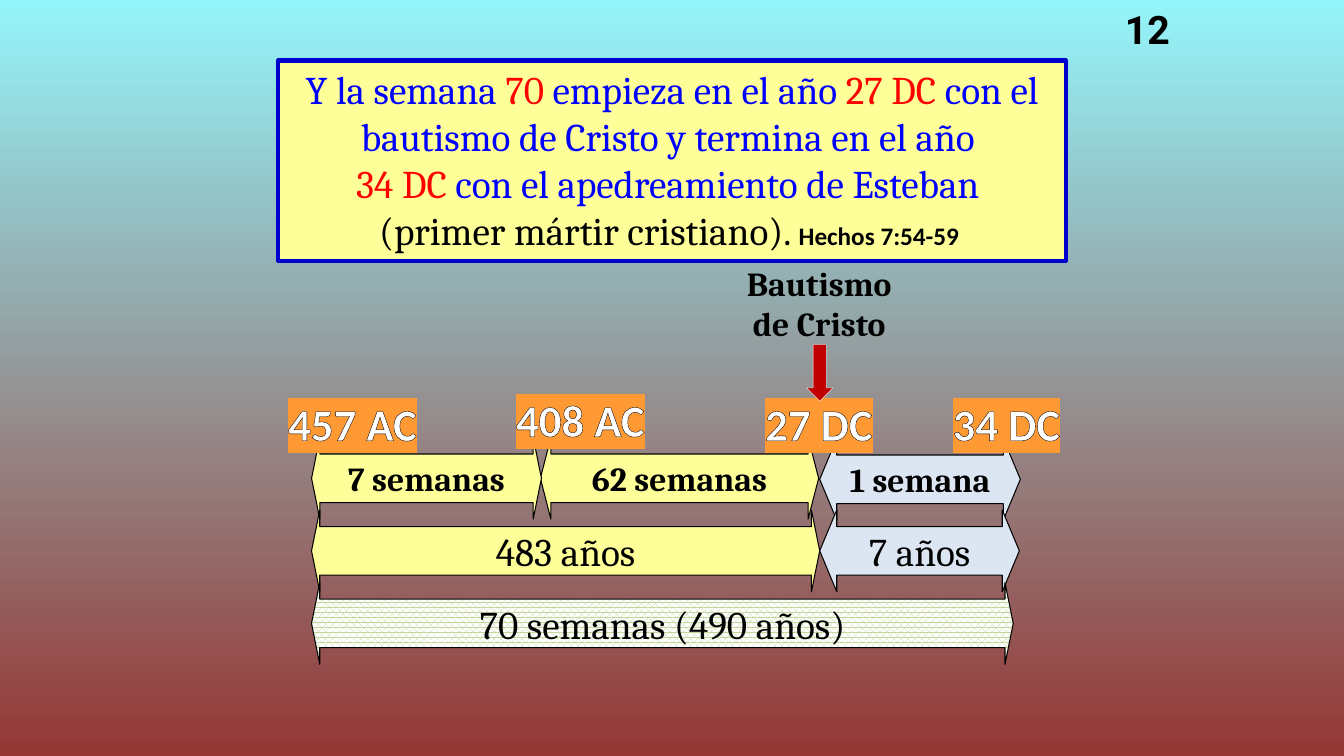
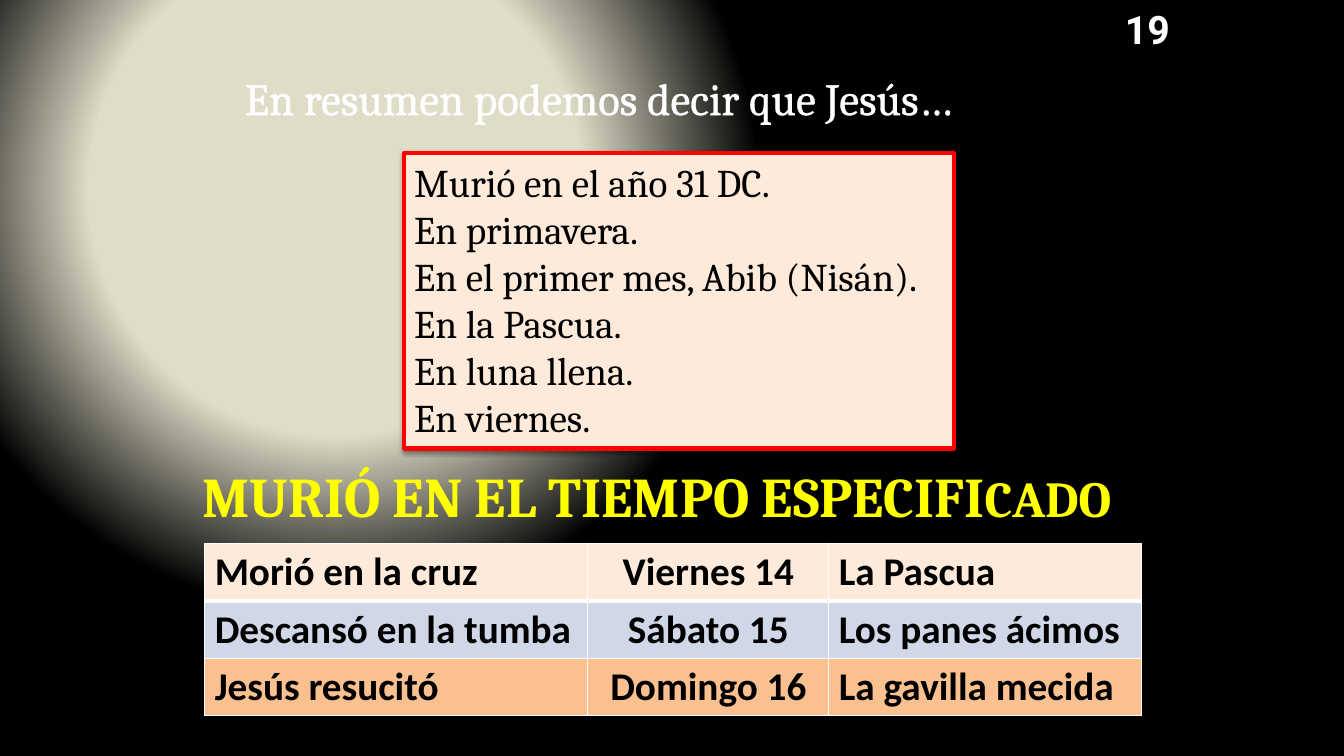
from dataclasses import dataclass, replace
from typing import Optional

import pptx
import pptx.dml.color
import pptx.enum.dml
import pptx.enum.shapes
import pptx.enum.text
import pptx.oxml.ns
import pptx.oxml.xmlchemy
import pptx.util

Inches = pptx.util.Inches
Pt = pptx.util.Pt
RGBColor = pptx.dml.color.RGBColor
Shape = pptx.enum.shapes.MSO_SHAPE
Align = pptx.enum.text.PP_ALIGN
Anchor = pptx.enum.text.MSO_ANCHOR
qn = pptx.oxml.ns.qn

BLACK = RGBColor(0x00, 0x00, 0x00)
WHITE = RGBColor(0xFF, 0xFF, 0xFF)
RED = RGBColor(0xFF, 0x00, 0x00)
DARK_RED = RGBColor(0xC0, 0x00, 0x00)
BLUE = RGBColor(0x00, 0x00, 0xFF)
NAVY = RGBColor(0x00, 0x00, 0xCC)
YELLOW = RGBColor(0xFF, 0xFF, 0x00)
PALE_YELLOW = RGBColor(0xFF, 0xFF, 0x99)
PALE_BLUE = RGBColor(0xDC, 0xE6, 0xF2)
PALE_GREEN = RGBColor(0xC3, 0xD6, 0x9B)
ORANGE = RGBColor(0xFF, 0x99, 0x33)
PEACH = RGBColor(0xFD, 0xEA, 0xDA)
APRICOT = RGBColor(0xFA, 0xC0, 0x90)
GREY_BLUE = RGBColor(0xD0, 0xD8, 0xE8)
MAROON = RGBColor(0x95, 0x37, 0x35)
AQUA = RGBColor(0x94, 0xF5, 0xFA)
IVORY = RGBColor(0xDF, 0xDC, 0xC7)


@dataclass(frozen=True)
class Look:
    size: float
    font: str = "Cambria"
    color: RGBColor = BLACK
    bold: bool = False
    outline: Optional[RGBColor] = None
    outline_width: float = 1.5
    highlight: Optional[RGBColor] = None


@dataclass(frozen=True)
class Span:
    text: str
    look: Look


@dataclass(frozen=True)
class Period:
    text: str
    left: float
    top: float
    width: float
    head: float
    fill: Optional[RGBColor]
    look: Look


@dataclass(frozen=True)
class YearLabel:
    text: str
    left: float
    top: float
    width: float


BODY = Look(28, outline=BLACK)
BLUE_BODY = replace(BODY, color=BLUE, outline=BLUE)
RED_BODY = replace(BODY, color=RED, outline=RED)
WEEKS = Look(24, bold=True)
YEARS = replace(BODY, outline_width=0.25)
YEAR_LABEL = Look(32, "Calibri", WHITE, True, BLACK, 0.75, ORANGE)
VERDICT = Look(40, color=YELLOW, bold=True, outline=NAVY, outline_width=0.25)
CELL = Look(28, "Calibri", bold=True)

PERIOD_HEIGHT = 0.81
PERIOD_TOPS = [4.34, 5.06, 5.78]
PERIODS = [
    Period("62 semanas", 5.36, PERIOD_TOPS[0], 2.76, 0.129, PALE_YELLOW, WEEKS),
    Period("7 semanas", 3.09, PERIOD_TOPS[0], 2.28, 0.101, PALE_YELLOW, WEEKS),
    Period("1 semana", 8.13, PERIOD_TOPS[0] + 0.01, 1.99, 0.209, PALE_BLUE, WEEKS),
    Period("483 años", 3.09, PERIOD_TOPS[1], 5.04, 0.101, PALE_YELLOW, YEARS),
    Period("7 años", 8.13, PERIOD_TOPS[1], 1.98, 0.209, PALE_BLUE, YEARS),
    Period("70 semanas (490 años)", 3.09, PERIOD_TOPS[2], 6.96, 0.101, None, YEARS),
]
YEAR_LABELS = [
    YearLabel("457 AC", 2.76, 3.88, 1.9),
    YearLabel("408 AC", 5.02, 3.84, 1.64),
    YearLabel("27 DC", 7.49, 3.88, 1.45),
    YearLabel("34 DC", 9.35, 3.88, 1.39),
]
FACTS = [
    "Murió en el año 31 DC.",
    "En primavera.",
    "En el primer mes, Abib (Nisán).",
    "En la Pascua.",
    "En luna llena.",
    "En viernes.",
]
DAYS = [
    (PEACH, ("Morió en la cruz", "Viernes 14", "La Pascua")),
    (GREY_BLUE, ("Descansó en la tumba", "Sábato 15", "Los panes ácimos")),
    (APRICOT, ("Jesús resucitó", "Domingo 16", "La gavilla mecida")),
]
DAY_WIDTHS = [3.8, 2.39, 3.1]
DAY_HEIGHT = 0.57


def drawing(tag: str, *children, **attributes):
    element = pptx.oxml.xmlchemy.OxmlElement(f"a:{tag}")
    for name, value in attributes.items():
        element.set(name, str(value))
    element.extend(children)
    return element


def rgb(color: RGBColor, *children):
    return drawing("srgbClr", *children, val=color)


def line_xml(tag: str, color: RGBColor, width: float):
    return drawing(tag, drawing("solidFill", rgb(color)), w=int(Pt(width)))


def set_background(page, stops, direction) -> None:
    page.background.fill.solid()
    solid = page.element.find(f".//{qn('p:bgPr')}/{qn('a:solidFill')}")
    marks = [drawing("gs", rgb(color), pos=place * 1000) for place, color in stops]
    gradient = drawing("gradFill", drawing("gsLst", *marks), direction, rotWithShape=1)
    solid.getparent().replace(solid, gradient)


def format_run(run, look: Look) -> None:
    run.font.size = Pt(look.size)
    run.font.name = look.font
    run.font.bold = look.bold
    run.font.color.rgb = look.color
    properties = run.font._element
    if look.outline is not None:
        properties.insert(0, line_xml("ln", look.outline, look.outline_width))
    if look.highlight is not None:
        fill = properties.find(qn("a:solidFill"))
        fill.addnext(drawing("highlight", rgb(look.highlight)))


def write(frame, lines: list[list[Span]], align=Align.LEFT) -> None:
    for index, spans in enumerate(lines):
        para = frame.paragraphs[0] if index == 0 else frame.add_paragraph()
        para.alignment = align
        for span in spans:
            run = para.add_run()
            run.text = span.text
            format_run(run, span.look)


def fit(frame, wrap: bool = True) -> None:
    frame.word_wrap = wrap
    frame.auto_size = pptx.enum.text.MSO_AUTO_SIZE.SHAPE_TO_FIT_TEXT


def add_text(page, left: float, top: float, width: float, height: float,
             lines: list[list[Span]], align=Align.LEFT, wrap: bool = True) -> None:
    box = page.shapes.add_textbox(Inches(left), Inches(top), Inches(width), Inches(height))
    fit(box.text_frame, wrap)
    write(box.text_frame, lines, align)


def add_figure(page, kind, left: float, top: float, width: float, height: float,
               fill: Optional[RGBColor], line: RGBColor, line_width: float):
    figure = page.shapes.add_shape(kind, Inches(left), Inches(top), Inches(width), Inches(height))
    figure.shadow.inherit = False
    if fill is None:
        figure.fill.patterned()
        figure.fill.pattern = pptx.enum.dml.MSO_PATTERN.PERCENT_70
        figure.fill.fore_color.rgb = PALE_GREEN
        figure.fill.back_color.rgb = WHITE
    else:
        figure.fill.solid()
        figure.fill.fore_color.rgb = fill
    figure.line.color.rgb = line
    figure.line.width = Pt(line_width)
    return figure


def add_panel(page, left: float, top: float, width: float, height: float,
              fill: RGBColor, line: RGBColor, lines: list[list[Span]], align):
    panel = add_figure(page, Shape.RECTANGLE, left, top, width, height, fill, line, 3)
    panel.text_frame.vertical_anchor = Anchor.TOP
    fit(panel.text_frame)
    write(panel.text_frame, lines, align)
    return panel


def add_page_number(page, number: str, color: RGBColor) -> None:
    span = Span(number, Look(28, "Roboto", color, True))
    add_text(page, 11.03, 0, 0.7, 0.57, [[span]], Align.CENTER, False)


def add_period(page, period: Period) -> None:
    arrow = add_figure(page, Shape.LEFT_RIGHT_ARROW, period.left, period.top, period.width,
                       PERIOD_HEIGHT, period.fill, BLACK, 0.75)
    arrow.adjustments[0] = 0.595
    arrow.adjustments[1] = period.head
    arrow.text_frame.word_wrap = False
    arrow.text_frame.vertical_anchor = Anchor.MIDDLE
    write(arrow.text_frame, [[Span(period.text, period.look)]], Align.CENTER)


def add_days_table(page) -> None:
    table = page.shapes.add_table(
        len(DAYS), len(DAY_WIDTHS), Inches(2.03), Inches(5.39),
        Inches(sum(DAY_WIDTHS)), Inches(DAY_HEIGHT * len(DAYS))).table
    table.first_row = False
    table.horz_banding = False
    for column, width in zip(table.columns, DAY_WIDTHS):
        column.width = Inches(width)
    for row_index, (color, texts) in enumerate(DAYS):
        table.rows[row_index].height = Inches(DAY_HEIGHT)
        for column_index, text in enumerate(texts):
            cell = table.cell(row_index, column_index)
            align = Align.CENTER if column_index == 1 else Align.LEFT
            write(cell.text_frame, [[Span(text, CELL)]], align)
            cell.fill.solid()
            cell.fill.fore_color.rgb = color
            widths = {"lnL": 1, "lnR": 1,
                      "lnT": 3 if row_index == 1 else 1,
                      "lnB": 3 if row_index == 0 else 1}
            properties = cell._tc.get_or_add_tcPr()
            for index, (side, width) in enumerate(widths.items()):
                properties.insert(index, line_xml(side, WHITE, width))


def build_timeline(page) -> None:
    set_background(page, [(0, MAROON), (100, AQUA)], drawing("lin", ang=270 * 60000, scaled=0))
    add_panel(page, 2.76, 0.6, 7.81, 1.99, PALE_YELLOW, NAVY, [
        [Span("Y la semana ", BLUE_BODY), Span("70", RED_BODY),
         Span(" empieza en el año ", BLUE_BODY), Span("27 DC ", RED_BODY),
         Span("con el bautismo de Cristo y termina en el año ", BLUE_BODY)],
        [Span("34 DC ", RED_BODY), Span("con el apedreamiento de Esteban ", BLUE_BODY)],
        [Span("(primer mártir cristiano). ", BODY),
         Span("Hechos 7:54-59 ", Look(18, "Calibri", bold=True))],
    ], Align.CENTER)
    for period in PERIODS[:-1]:
        add_period(page, period)
    for label in YEAR_LABELS:
        add_text(page, label.left, label.top, label.width, 0.64, [[Span(label.text, YEAR_LABEL)]])
    add_period(page, PERIODS[-1])
    add_page_number(page, "12", BLACK)
    add_text(page, 7.13, 2.56, 1.99, 0.91,
             [[Span("Bautismo", WEEKS)], [Span("de Cristo", WEEKS)]], Align.CENTER)
    add_figure(page, Shape.DOWN_ARROW, 8, 3.42, 0.26, 0.56, DARK_RED, WHITE, 0.25)


def build_summary(page) -> None:
    focus = drawing("fillToRect", l=50000, t=50000, r=100000, b=100000)
    set_background(page, [(0, IVORY), (32, IVORY), (55, BLACK), (89, BLACK)],
                   drawing("path", focus, path="circle"))
    heading = replace(BODY, size=32, color=WHITE, outline=WHITE)
    add_text(page, 2.33, 0.65, 8.71, 0.64,
             [[Span("En resumen podemos decir que Jesús…", heading)]])
    panel = add_panel(page, 4.01, 1.52, 5.45, 2.93, PEACH, RED,
                      [[Span(fact, BODY)] for fact in FACTS], Align.LEFT)
    shadow = drawing("outerShdw", rgb(BLACK, drawing("alpha", val=38000)),
                     blurRad=int(Pt(3.1)), dist=int(Pt(1.6)), dir=90 * 60000, rotWithShape=0)
    panel.element.spPr.find(qn("a:effectLst")).append(shadow)
    add_text(page, 1.91, 4.53, 9.51, 0.77,
             [[Span("MURIÓ EN EL TIEMPO ESPECIFI", VERDICT),
               Span("CADO", replace(VERDICT, size=36))]])
    add_page_number(page, "19", WHITE)
    add_days_table(page)


def main() -> None:
    deck = pptx.Presentation()
    deck.slide_width = Inches(13.33)
    deck.slide_height = Inches(7.5)
    for build in (build_timeline, build_summary):
        build(deck.slides.add_slide(deck.slide_layouts[6]))
    deck.save("out.pptx")


if __name__ == "__main__":
    main()
